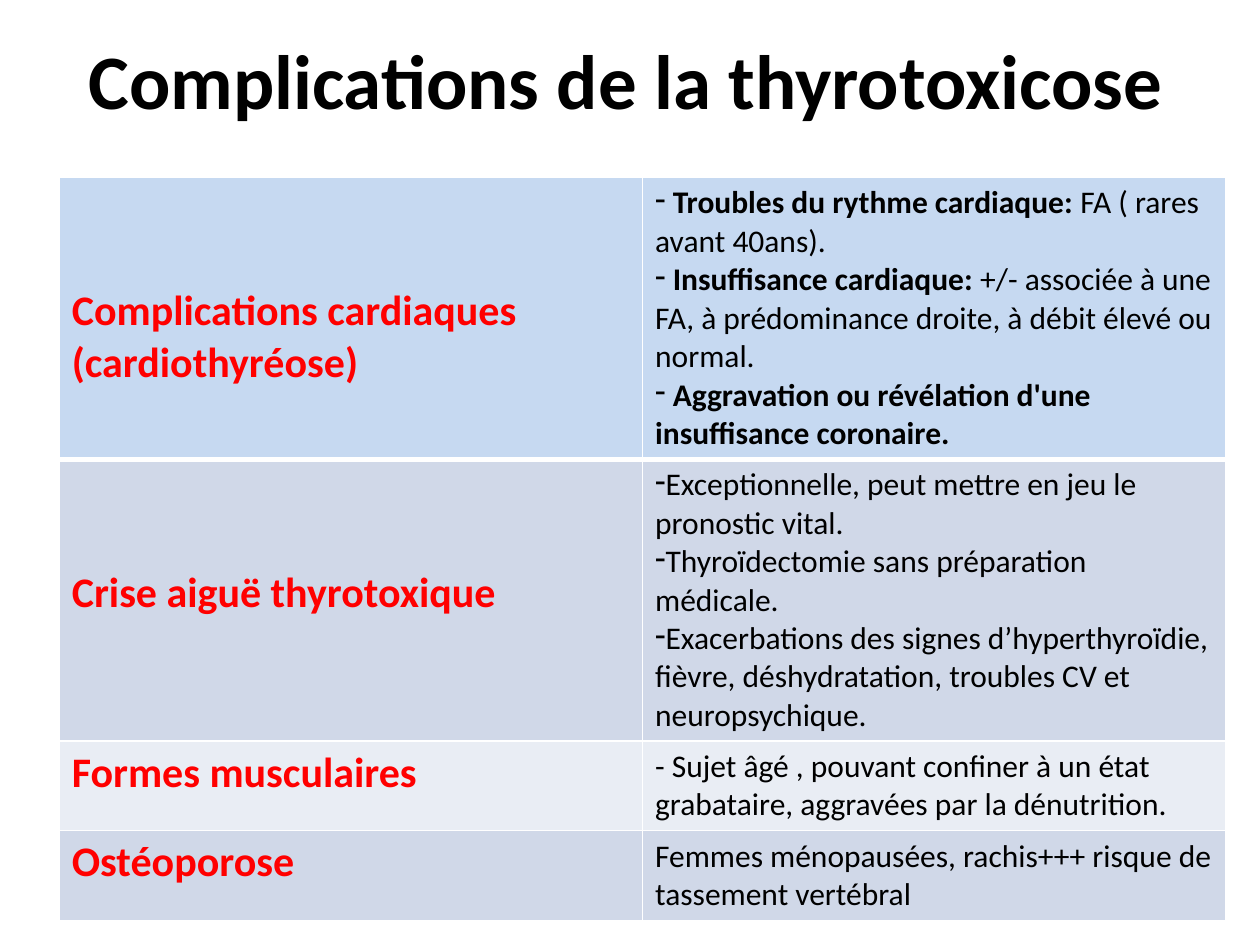
from lxml.etree import SubElement
from pptx import Presentation
from pptx.dml.color import RGBColor as RGB
from pptx.enum.text import MSO_ANCHOR as Anchor, PP_ALIGN as Align
from pptx.oxml.ns import qn
from pptx.util import Inches, Pt

COLORS = {"ink": "000000", "red": "FF0000", "line": "FFFFFF",
          "head": "C6D9F1", "dark": "D0D8E8", "pale": "E9EDF4"}
FONT = "Calibri"
DROP = 0.86  # top margin of the labels set lower in the tall rows

# label, label top margin, row height, fill, bulleted, paragraphs of (text, bold) runs
ROWS = [
    ("Complications cardiaques (cardiothyréose)", DROP, 2.23, "head", True, [
        [(" ", False), ("Troubles du rythme cardiaque: ", True),
         ("FA ( rares avant 40ans).", False)],
        [(" ", False), ("Insuffisance cardiaque: ", True),
         ("+/- associée à une FA, à prédominance droite, à débit élevé ou normal.", False)],
        [(" ", False), ("Aggravation ou révélation d'une insuffisance coronaire.", True)]]),
    ("Crise aiguë thyrotoxique", DROP, 2.23, "dark", True, [
        [("Exceptionnelle, peut mettre en jeu le pronostic vital.", False)],
        [("Thyroïdectomie sans préparation médicale.", False)],
        [("Exacerbations des signes d’hyperthyroïdie, fièvre, déshydratation, "
          "troubles CV et neuropsychique.", False)]]),
    ("Formes musculaires", 0.05, 0.71, "pale", False, [
        [("- Sujet âgé , pouvant confiner à un état grabataire, "
          "aggravées par la dénutrition.", False)]]),
    ("Ostéoporose", 0.05, 0.71, "dark", False, [
        [("Femmes ménopausées, rachis+++ risque de tassement vertébral", False)]]),
]


def write(para, text, size=18, color="ink", bold=False):
    run = para.add_run()
    run.text = text
    font = run.font
    font.name, font.size, font.bold = FONT, Pt(size), bold
    font.color.rgb = RGB.from_string(COLORS[color])


def dash(para):
    """Give the paragraph a hyphen bullet with no indent."""
    props = para._p.get_or_add_pPr()
    props.set("marL", "0")
    props.set("indent", "0")
    SubElement(props, qn("a:buChar")).set("char", "-")


def edge(cell, base):
    """Draw the four cell borders; base is the width of the bottom one."""
    props = cell._tc.get_or_add_tcPr()
    for side, width in zip("LRTB", (1, 1, 1, base)):
        line = SubElement(props, qn(f"a:ln{side}"), w=str(Pt(width)))
        fill = SubElement(line, qn("a:solidFill"))
        SubElement(fill, qn("a:srgbClr"), val=COLORS["line"])


class Deck:
    def __init__(self):
        self.prs = Presentation()
        self.prs.slide_width, self.prs.slide_height = Inches(10), Inches(7.5)
        self.slide = self.prs.slides.add_slide(self.prs.slide_layouts[5])

    def title(self, text):
        shape = self.slide.shapes.title
        shape.left, shape.top = Inches(0.47), Inches(0)
        shape.width, shape.height = Inches(9), Inches(1.25)
        frame = shape.text_frame
        frame.vertical_anchor = Anchor.MIDDLE
        para = frame.paragraphs[0]
        para.alignment = Align.CENTER
        write(para, text, size=44, bold=True)

    def table(self, rows):
        high = sum(row[2] for row in rows)
        grid = self.slide.shapes.add_table(
            len(rows), 2, Inches(0.47), Inches(1.41), Inches(9.26), Inches(high)).table
        for col in grid.columns:
            col.width = Inches(4.63)
        for i, (label, top, height, fill, listed, paras) in enumerate(rows):
            grid.rows[i].height = Inches(height)
            left, right = grid.cell(i, 0), grid.cell(i, 1)
            for cell in (left, right):
                edge(cell, 1 if i else 3)
                cell.fill.solid()
                cell.fill.fore_color.rgb = RGB.from_string(COLORS[fill])
            left.margin_top = Inches(top)
            write(left.text_frame.paragraphs[0], label, size=24, color="red", bold=True)
            self.body(right.text_frame, paras, listed)

    def body(self, frame, paras, listed):
        for i, runs in enumerate(paras):
            para = frame.add_paragraph() if i else frame.paragraphs[0]
            if listed:
                dash(para)
            for text, bold in runs:
                write(para, text, bold=bold)


def main():
    deck = Deck()
    deck.title("Complications de la thyrotoxicose")
    deck.table(ROWS)
    deck.prs.save("out.pptx")


if __name__ == "__main__":
    main()
